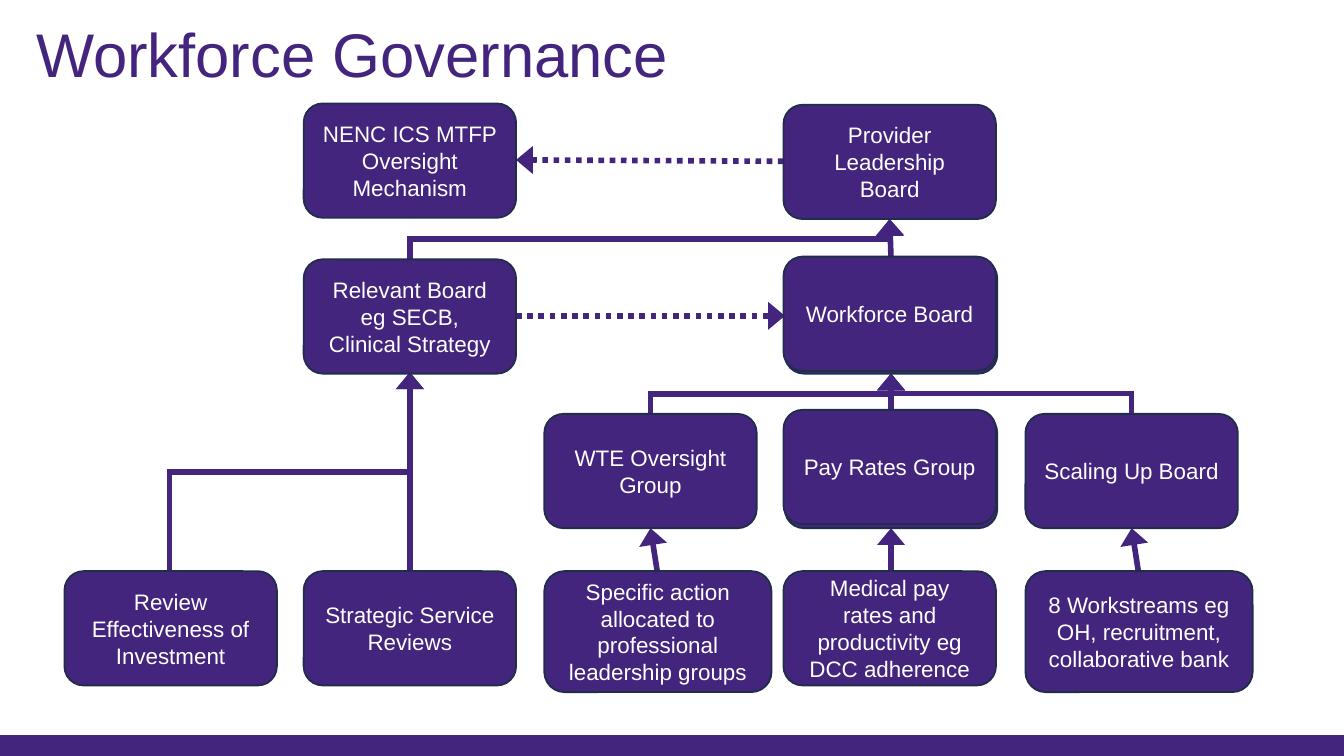
from lxml import etree
from pptx import Presentation
from pptx.dml.color import RGBColor
from pptx.enum.dml import MSO_LINE
from pptx.enum.shapes import MSO_CONNECTOR as LINK, MSO_SHAPE as SHAPE
from pptx.enum.text import MSO_ANCHOR as ANCHOR, PP_ALIGN as ALIGN
from pptx.oxml.ns import qn
from pptx.util import Inches, Pt

PURPLE, NAVY, WHITE = "44257D", "202D4B", "FFFFFF"
BOX = (1.58, 0.85)
WIDE_BOX = (1.69, 0.9)


def paint(color_format, color):
    color_format.rgb = RGBColor.from_string(color)


def arrow(x1, y1, x2, y2, kind=LINK.STRAIGHT):
    """Draw an arrow; an elbow leaves and arrives vertically, going up."""
    if kind == LINK.ELBOW:
        # Lay the frame on its side, then turn it by 270 degrees
        mid_x, mid_y = (x1 + x2) / 2, (y1 + y2) / 2
        half_w, half_h = (y1 - y2) / 2, (x2 - x1) / 2
        x1, x2 = mid_x - half_w, mid_x + half_w
        y1, y2 = mid_y - half_h, mid_y + half_h
    link = slide.shapes.add_connector(
        kind, Inches(x1), Inches(y1), Inches(x2), Inches(y2))
    properties = link.element.spPr
    if kind == LINK.ELBOW:
        properties.find(qn("a:xfrm")).set("rot", str(270 * 60000))
    paint(link.line.color, PURPLE)
    link.line.width = Pt(3)
    outline = properties.find(qn("a:ln"))
    etree.SubElement(outline, qn("a:miter"), lim="800000")
    etree.SubElement(outline, qn("a:tailEnd"), type="triangle", w="lg", len="med")
    etree.SubElement(properties, qn("a:effectLst"))
    return link


prs = Presentation()
prs.slide_width = Inches(10)
prs.slide_height = Inches(10 * 9 / 16)
slide = prs.slides.add_slide(prs.slide_layouts[6])

footer = slide.shapes.add_shape(
    SHAPE.RECTANGLE, 0, Inches(5.47), Inches(10), prs.slide_height - Inches(5.47))
footer.shadow.inherit = False
footer.fill.solid()
paint(footer.fill.fore_color, PURPLE)
footer.line.fill.background()

# Arrows: straight ones join neighbours, elbows merge into a shared target
arrow(6.63, 1.93, 6.62, 1.63)
arrow(6.63, 3.08, 6.63, 2.78)
arrow(3.05, 4.25, 3.05, 2.77)
arrow(4.89, 4.25, 4.84, 3.93)
arrow(6.63, 4.25, 6.63, 3.93)
arrow(8.47, 4.25, 8.42, 3.93)
for elbow in [
    (3.05, 1.93, 6.62, 1.63),
    (4.84, 3.08, 6.63, 2.78),
    (8.42, 3.08, 6.63, 2.78),
    (1.26, 4.25, 3.05, 2.77),
]:
    arrow(*elbow, kind=LINK.ELBOW)
for advice in [(5.83, 1.2, 3.84, 1.19), (3.84, 2.35, 5.84, 2.35)]:
    arrow(*advice).line.dash_style = MSO_LINE.ROUND_DOT

# Groups and boards: name, left, top, size; a nameless box is a rim behind the next
groups = [
    ("NENC ICS MTFP Oversight Mechanism", 2.26, 0.77, BOX),
    ("Provider Leadership Board", 5.83, 0.78, BOX),
    ("Relevant Board eg SECB, Clinical Strategy", 2.26, 1.93, BOX),
    ("", 5.84, 1.93, BOX),
    ("Workforce Board", 5.83, 1.91, BOX),
    ("WTE Oversight Group", 4.05, 3.08, BOX),
    ("", 5.84, 3.08, BOX),
    ("Pay Rates Group", 5.83, 3.05, BOX),
    ("Scaling Up Board", 7.63, 3.08, BOX),
    ("Review Effectiveness of Investment", 0.48, 4.25, BOX),
    ("Strategic Service Reviews", 2.26, 4.25, BOX),
    ("Specific action allocated to professional leadership groups",
     4.05, 4.25, WIDE_BOX),
    ("Medical pay rates and productivity eg DCC adherence", 5.83, 4.25, BOX),
    ("8 Workstreams eg OH, recruitment, collaborative bank",
     7.63, 4.25, WIDE_BOX),
]
for name, left, top, (width, height) in groups:
    group = slide.shapes.add_shape(
        SHAPE.ROUNDED_RECTANGLE,
        Inches(left), Inches(top), Inches(width), Inches(height))
    group.shadow.inherit = False
    group.fill.solid()
    paint(group.fill.fore_color, PURPLE)
    paint(group.line.color, NAVY)
    group.line.width = Pt(1)
    if not name:
        continue
    frame = group.text_frame
    frame.text = name
    frame.word_wrap = True
    frame.vertical_anchor = ANCHOR.MIDDLE
    label = frame.paragraphs[0]
    label.alignment = ALIGN.CENTER
    font = label.runs[0].font
    font.name, font.size = "Arial", Pt(12)
    paint(font.color, WHITE)

title = slide.shapes.add_textbox(
    Inches(0.17), Inches(-0.12), Inches(8.62), Inches(1.09)).text_frame
title.text = "Workforce Governance"
title.word_wrap = True
title.vertical_anchor = ANCHOR.MIDDLE
heading = title.paragraphs[0]
heading.line_spacing = 0.9
font = heading.runs[0].font
font.name, font.size = "Arial", Pt(33)
paint(font.color, PURPLE)

prs.save("out.pptx")
